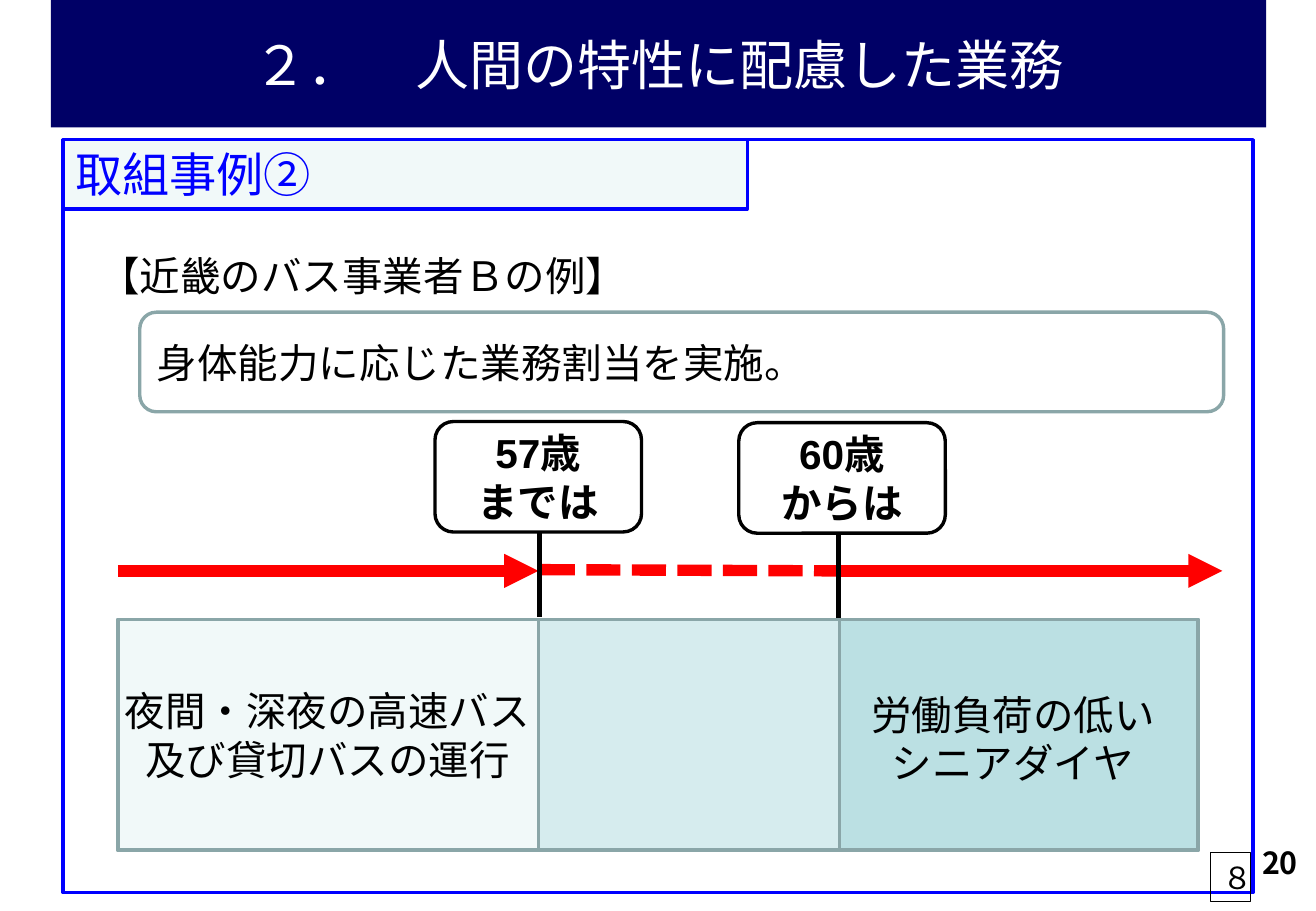
"""Build the slide on assigning bus duties by driver age."""
from lxml import etree
from pptx import Presentation
from pptx.dml.color import RGBColor
from pptx.enum.dml import MSO_LINE
from pptx.enum.shapes import MSO_CONNECTOR, MSO_SHAPE
from pptx.enum.text import MSO_ANCHOR, PP_ALIGN
from pptx.oxml.ns import qn
from pptx.util import Inches, Pt

RECT, ROUND = MSO_SHAPE.RECTANGLE, MSO_SHAPE.ROUNDED_RECTANGLE
LEFT, CENTER, RIGHT = PP_ALIGN.LEFT, PP_ALIGN.CENTER, PP_ALIGN.RIGHT
TOP, MIDDLE = MSO_ANCHOR.TOP, MSO_ANCHOR.MIDDLE
STRAIGHT, DASH = MSO_CONNECTOR.STRAIGHT, MSO_LINE.SQUARE_DOT
JAPANESE = "Noto Sans CJK JP"
COLORS = {
    "navy": "000066", "blue": "0000FF", "red": "FF0000",
    "black": "000000", "white": "FFFFFF", "edge": "8AA6A8",
    "pale": "F1F9F9", "light": "D6ECEE", "teal": "BBE0E3",
}

prs = Presentation()
prs.slide_width, prs.slide_height = Inches(10.83), Inches(7.5)
slide = prs.slides.add_slide(prs.slide_layouts[6])


def add_box(at, lines=(), kind=RECT, fill=None, edge=None, width=2, size=24,
            font="Calibri", color="black", bold=False, align=LEFT, anchor=TOP):
    """Add a box with one paragraph for each line of text."""
    box = slide.shapes.add_shape(kind, *map(Inches, at))
    box.shadow.inherit = False
    if fill:
        box.fill.solid()
        box.fill.fore_color.rgb = RGBColor.from_string(COLORS[fill])
    else:
        box.fill.background()
    if edge:
        box.line.color.rgb = RGBColor.from_string(COLORS[edge])
        box.line.width = Pt(width)
    else:
        box.line.fill.background()
    frame = box.text_frame
    frame.word_wrap = True
    frame.vertical_anchor = anchor
    for index, line in enumerate(lines):
        paragraph = frame.add_paragraph() if index else frame.paragraphs[0]
        paragraph.alignment = align
        run = paragraph.add_run()
        run.text = line
        run.font.name, run.font.size, run.font.bold = font, Pt(size), bold
        run.font.color.rgb = RGBColor.from_string(COLORS[color])
        east_asian = etree.SubElement(run.font._element, qn("a:ea"))
        east_asian.set("typeface", JAPANESE)
        run.font._element.find(qn("a:latin")).addnext(east_asian)


def add_line(start, end, color, width, dash=None, arrow=False):
    """Add a straight line, with an arrowhead at its end if wanted."""
    line = slide.shapes.add_connector(STRAIGHT, *map(Inches, start + end))
    line.line.color.rgb = RGBColor.from_string(COLORS[color])
    line.line.width = Pt(width)
    if dash:
        line.line.dash_style = dash
    if arrow:
        etree.SubElement(line.line._get_or_add_ln(), qn("a:tailEnd"), type="triangle")
    etree.SubElement(line._element.spPr, qn("a:effectLst"))


add_box((0.42, 0, 10, 1.05), ["２．　人間の特性に配慮した業務"], fill="navy", size=32,
        font="Arial", color="white", align=CENTER, anchor=MIDDLE)
add_box((0.52, 1.15, 9.79, 6.2), edge="blue")
add_box((0.52, 1.15, 5.63, 0.57), ["取組事例②"], fill="pale", edge="blue", size=28,
        font=JAPANESE, color="blue")

band_top, band_height = 5.1, 1.9
band_edges = [0.97, 4.43, 6.91, 9.86]
for left, right, fill in zip(band_edges, band_edges[1:], ["pale", "light", "teal"]):
    add_box((left, band_top, right - left, band_height), fill=fill, edge="edge")
add_box((0.91, 5.6, 3.57, 0.91), ["夜間・深夜の高速バス及び貸切バスの運行"], align=CENTER)
add_box((7.05, 5.63, 2.57, 0.91), ["労働負荷の低いシニアダイヤ"], align=CENTER)
add_box((band_edges[0], band_top, band_edges[-1] - band_edges[0], band_height), edge="edge")

add_box((0.72, 2.02, 6.81, 0.51), ["【近畿のバス事業者Ｂの例】"])
add_box((1.15, 2.57, 8.92, 0.82), ["身体能力に応じた業務割当を実施。"], kind=ROUND,
        edge="edge", font="Arial", anchor=MIDDLE)

add_line((0.97, 4.7), (4.43, 4.7), "red", 6.75, arrow=True)
add_line((6.91, 4.7), (10.06, 4.7), "red", 6.75, arrow=True)
add_line((4.45, 4.69), (6.93, 4.7), "red", 6.75, dash=DASH)

age_limits = [(4.44, 3.58, 3.47, ["57歳", "までは"]), (6.9, 6.08, 3.48, ["60歳", "からは"])]
for tick, left, top, words in age_limits:
    add_line((tick, top + 1.61), (tick, top + 0.06), "black", 3.25)
    add_box((left, top, 1.7, 0.91), words, kind=ROUND, fill="white", edge="black",
            font="Arial", bold=True, align=CENTER, anchor=MIDDLE)

add_box((8.25, 6.9, 2.53, 0.52), ["20"], size=18, font=JAPANESE, bold=True, align=RIGHT)
add_box((9.96, 7.02, 0.33, 0.4), ["８"], edge="black", width=0.75, size=18,
        font="TeX Gyre Schola", align=CENTER)

prs.save("out.pptx")
